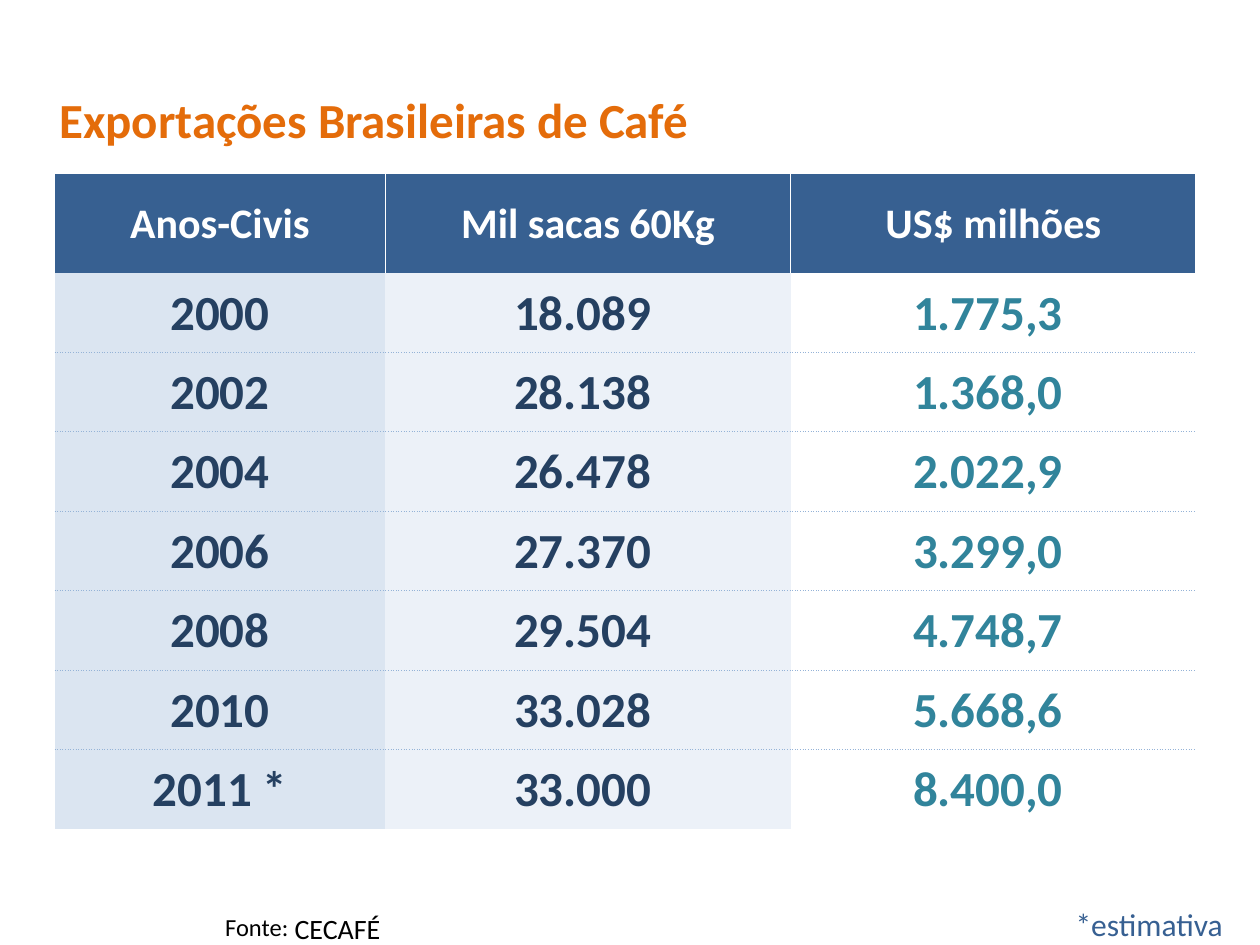
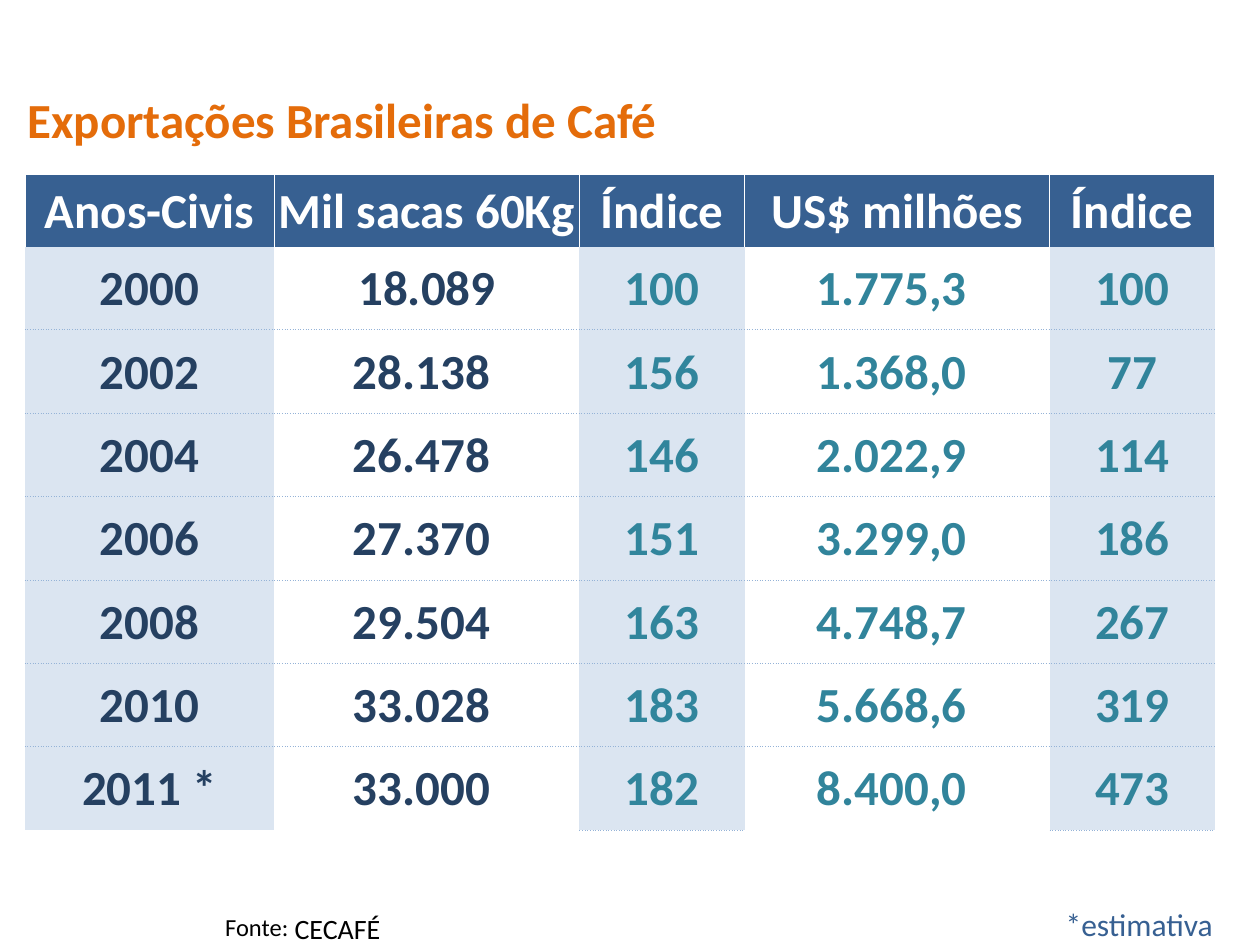
"""Build two slides with tables of Brazilian coffee exports."""
from dataclasses import dataclass

from lxml.etree import SubElement
from pptx import Presentation
from pptx.dml.color import RGBColor as Rgb
from pptx.enum.text import MSO_ANCHOR as Anchor, MSO_AUTO_SIZE as AutoSize, PP_ALIGN as Align
from pptx.oxml.ns import qn
from pptx.util import Cm, Pt


@dataclass(frozen=True)
class Theme:
    font: str = "Calibri"
    orange: str = "E46C0A"
    header: str = "376091"
    note: str = "376092"
    navy: str = "254061"
    teal: str = "31849B"
    index_teal: str = "31859C"
    pale: str = "DBE5F1"
    paler: str = "ECF1F8"
    rule: str = "95B3D7"
    white: str = "FFFFFF"
    black: str = "000000"
    title_size: int = 28
    body_size: int = 28
    small_header_size: int = 24
    note_size: int = 18
    source_size: int = 16
    label_size: int = 14
    no_style: str = "{2D5ABB26-0587-4C30-8999-92F81FD0307C}"


@dataclass(frozen=True)
class Column:
    heading: str
    width: float
    values: list
    color: str
    fill: str = ""
    closed: bool = False


class Deck:
    def __init__(self, theme):
        self.theme = theme
        self.presentation = Presentation()
        self.presentation.slide_width = Cm(25.4)
        self.presentation.slide_height = Cm(19.05)
        self.slide = None

    def add_slide(self, title, title_left, note_left):
        theme = self.theme
        self.slide = self.presentation.slides.add_slide(self.presentation.slide_layouts[5])
        shape = self.slide.shapes.title
        shape.left, shape.top, shape.width, shape.height = Cm(title_left), Cm(1.68), Cm(13.36), Cm(1.45)
        self.set_text(shape.text_frame, title, theme.title_size, theme.orange, bold=True)
        self.add_text("Fonte:", 4.29, 18.26, 1.8, 0.86, theme.label_size, theme.black)
        self.add_text("CECAFÉ", 5.69, 18.26, 2.26, 0.94, theme.source_size, theme.black)
        self.add_text("*estimativa", note_left, 18.11, 9, 1.02, theme.note_size, theme.note, Align.RIGHT)

    def add_text(self, text, left, top, width, height, size, color, align=Align.LEFT):
        shape = self.slide.shapes.add_textbox(Cm(left), Cm(top), Cm(width), Cm(height))
        self.set_text(shape.text_frame, text, size, color, align)

    def set_text(self, frame, text, size, color, align=Align.LEFT, bold=False):
        frame.text = text
        frame.word_wrap = align == Align.RIGHT
        frame.auto_size = AutoSize.NONE
        frame.vertical_anchor = Anchor.TOP
        self.style_paragraph(frame.paragraphs[0], size, color, align, bold)

    def style_paragraph(self, paragraph, size, color, align, bold):
        paragraph.alignment = align
        font = paragraph.font
        font.name, font.size, font.bold = self.theme.font, Pt(size), bold
        font.color.rgb = Rgb.from_string(color)

    def add_table(self, columns, left, top, height, header_height, header_size):
        theme = self.theme
        count = len(columns[0].values)
        width = sum(column.width for column in columns)
        table = self.slide.shapes.add_table(
            count + 1, len(columns), Cm(left), Cm(top), Cm(width), Cm(height)).table
        table.first_row = table.horz_banding = False
        table._tbl.tblPr.find(qn("a:tableStyleId")).text = theme.no_style
        table.rows[0].height = Cm(header_height)
        for row in range(1, count + 1):
            table.rows[row].height = Cm((height - header_height) / count)
        for number, column in enumerate(columns):
            table.columns[number].width = Cm(column.width)
            heading = table.cell(0, number)
            self.add_borders(heading, ("lnL", "lnR"), theme.white, 1, "solid")
            self.fill_cell(heading, column.heading, header_size, theme.white, theme.header)
            for row, value in enumerate(column.values, 1):
                cell = table.cell(row, number)
                edges = ["lnT"] if row > 1 else []
                if row < count or column.closed:
                    edges.append("lnB")
                self.add_borders(cell, edges, theme.rule, 0.5, "sysDot")
                self.fill_cell(cell, value, theme.body_size, column.color, column.fill)

    def fill_cell(self, cell, text, size, color, fill):
        cell.text = text
        cell.vertical_anchor = Anchor.MIDDLE
        cell.margin_left = cell.margin_right = cell.margin_top = Cm(0.03)
        cell.margin_bottom = 0
        self.style_paragraph(cell.text_frame.paragraphs[0], size, color, Align.CENTER, True)
        if fill:
            cell.fill.solid()
            cell.fill.fore_color.rgb = Rgb.from_string(fill)
        else:
            cell.fill.background()

    def add_borders(self, cell, edges, color, width, dash):
        properties = cell._tc.get_or_add_tcPr()
        for edge in edges:
            line = SubElement(properties, qn(f"a:{edge}"), w=str(Pt(width)))
            SubElement(SubElement(line, qn("a:solidFill")), qn("a:srgbClr"), val=color)
            SubElement(line, qn("a:prstDash"), val=dash)


TITLE = "Exportações Brasileiras de Café"
YEARS = ["2000", "2002", "2004", "2006", "2008", "2010", "2011 *"]
SACKS = ["18.089 ", "28.138 ", "26.478 ", "27.370 ", "29.504 ", "33.028 ", "33.000 "]
DOLLARS = ["1.775,3 ", "1.368,0 ", "2.022,9 ", "3.299,0 ", "4.748,7 ", "5.668,6 ", "8.400,0 "]
SACKS_INDEX = ["100", "156", "146", "151", "163", "183", "182"]
DOLLARS_INDEX = ["100", "77", "114", "186", "267", "319", "473"]
YEARS_HEADING, SACKS_HEADING, DOLLARS_HEADING, INDEX_HEADING = (
    "Anos-Civis", "Mil sacas 60Kg", " US$ milhões ", "Índice")


def main():
    theme = Theme()
    deck = Deck(theme)

    deck.add_slide(TITLE, title_left=0.94, note_left=15.9)
    deck.add_table([
        Column(YEARS_HEADING, 6.67, YEARS, theme.navy, theme.pale),
        Column(SACKS_HEADING, 8.17, SACKS, theme.navy, theme.paler),
        Column(DOLLARS_HEADING, 8.17, DOLLARS, theme.teal),
    ], left=1.1, top=3.5, height=13.22, header_height=2, header_size=theme.small_header_size)

    deck.add_slide(TITLE, title_left=0.3, note_left=15.7)
    deck.add_table([
        Column(YEARS_HEADING, 5.03, YEARS, theme.navy, theme.pale),
        Column(SACKS_HEADING, 6.15, [" 18.089 ", *SACKS[1:]], theme.navy),
        Column(INDEX_HEADING, 3.33, SACKS_INDEX, theme.index_teal, theme.pale, closed=True),
        Column(DOLLARS_HEADING, 6.15, DOLLARS, theme.teal),
        Column(INDEX_HEADING, 3.33, DOLLARS_INDEX, theme.teal, theme.pale, closed=True),
    ], left=0.5, top=3.53, height=13.2, header_height=1.44, header_size=theme.body_size)

    deck.presentation.save("out.pptx")


if __name__ == "__main__":
    main()
